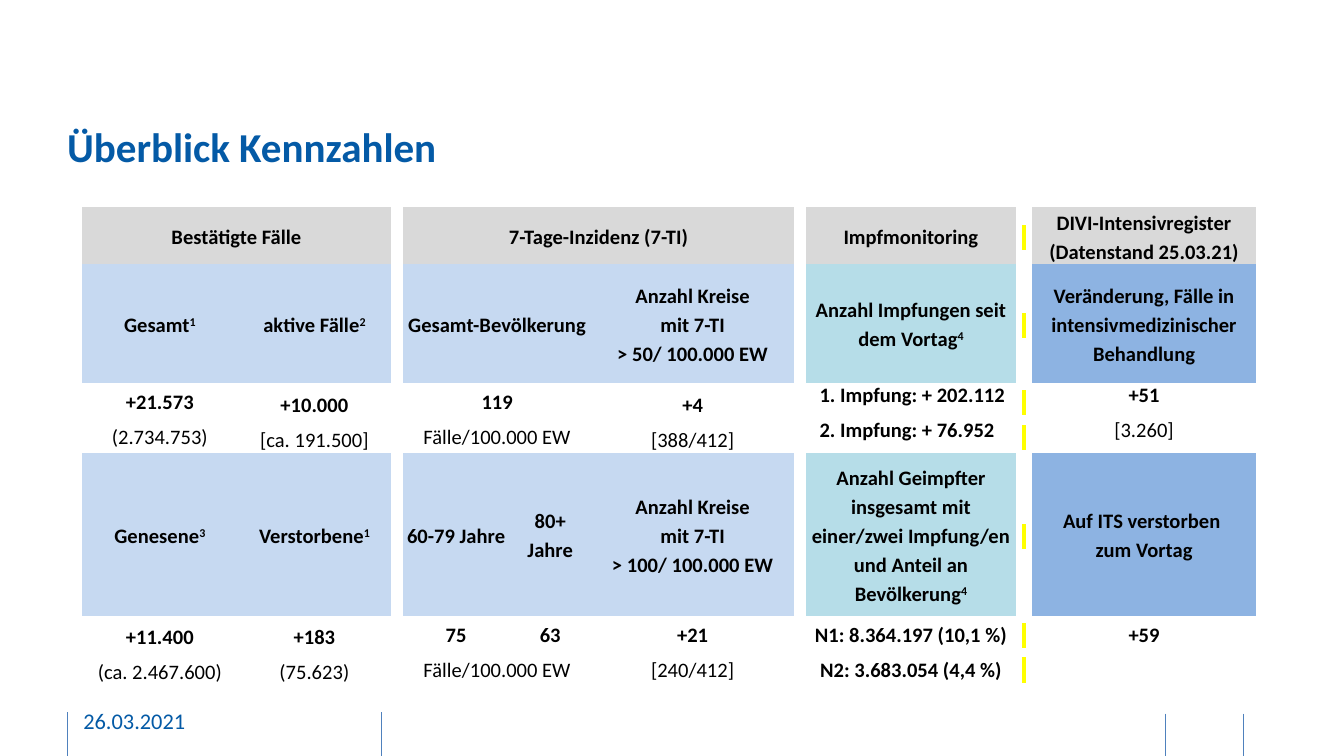
from dataclasses import dataclass

from pptx import Presentation
from pptx.dml.color import RGBColor
from pptx.enum import shapes, text
from pptx.oxml import xmlchemy as xc
from pptx.util import Inches, Pt


@dataclass(frozen=True)
class Theme:
    """Colours, font and type sizes."""
    font: str = "Calibri"
    blue: str = "045AA6"
    rule: str = "4F81BD"
    black: str = "000000"
    mark: str = "FFFF00"
    head: str = "D9D9D9"
    pale: str = "C6D9F1"
    teal: str = "B6DDE8"
    deep: str = "8DB3E2"
    title: int = 22
    date: int = 12
    body: int = 11


T = Theme()
MID = text.MSO_ANCHOR.MIDDLE
LOW = text.MSO_ANCHOR.BOTTOM
TOP = text.MSO_ANCHOR.TOP
WIDE = 10
COLS = [1.16, 1.14, 0.09, 0.79, 0.61, 1.51, 0.09, 1.56, 0.12, 1.67]
ROWS = [0.26, 0.89, 0.26, 0.26, 1.21, 0.26, 0.26]
MARK = 8
NBSP = chr(160)
FILLS = {0: T.pale, 1: T.pale, 3: T.pale, 4: T.pale, 5: T.pale, 7: T.teal, 9: T.deep}
SPANS = [(0, 0, 0, 1), (0, 3, 0, 5), (1, 3, 1, 4), (2, 3, 2, 4),
         (3, 3, 3, 4), (6, 3, 6, 4), (5, 2, 6, 2)]
LOWS = {(2, 1), (2, 5), (3, 1), (3, 5), (5, 0), (5, 1), (6, 0), (6, 1)}
DATA = [
    {0: "Bestätigte Fälle", 3: "7-Tage-Inzidenz (7-TI)", 7: "Impfmonitoring",
     9: "DIVI-Intensivregister\n(Datenstand 25.03.21)"},
    {0: "Gesamt^1", 1: "aktive Fälle^2", 3: "Gesamt-Bevölkerung",
     5: "Anzahl Kreise\nmit 7-TI\n> 50/ 100.000 EW",
     7: "Anzahl Impfungen seit dem Vortag^4",
     9: "Veränderung, Fälle in intensivmedizinischer Behandlung"},
    {0: "+21.573", 1: "+10.000", 3: "119", 5: "+4",
     7: "1. Impfung: + 202.112", 9: "+51"},
    {0: "(2.734.753)", 1: "[ca. 191.500]", 3: "Fälle/100.000 EW", 5: "[388/412]",
     7: "2. Impfung: + 76.952", 9: "[3.260]"},
    {0: "Genesene^3", 1: "Verstorbene^1", 3: "60-79 Jahre", 4: "80+ Jahre",
     5: "Anzahl Kreise\nmit 7-TI\n> 100/ 100.000 EW",
     7: "Anzahl Geimpfter insgesamt mit einer/zwei Impfung/en und Anteil an Bevölkerung^4",
     9: "Auf ITS verstorben |zum Vortag"},
    {0: "+11.400", 1: "+183", 3: "75", 4: "63", 5: "+21",
     7: "N1: 8.364.197 (10,1 %)", 9: "+59"},
    {0: "(ca. 2.467.600)", 1: "(75.623)", 3: "Fälle/100.000 EW", 5: "[240/412]",
     7: "N2: 3.683.054 (4,4 %)"},
]


def style(par, size, color, bold=False):
    """Set the font of a paragraph."""
    font = par.font
    font.name, font.size, font.bold = T.font, Pt(size), bold
    font.color.rgb = RGBColor.from_string(color)


def label(slide, words, box, size, pad=0, bold=False):
    """Add one line of blue text."""
    frame = slide.shapes.add_textbox(*map(Inches, box)).text_frame
    frame.word_wrap, frame.vertical_anchor = True, MID
    frame.margin_left = frame.margin_right = 0
    frame.margin_top = frame.margin_bottom = Inches(pad)
    par = frame.paragraphs[0]
    par.text = words
    style(par, size, T.blue, bold)


def rule(slide, x, top, end):
    """Add a thin vertical line."""
    line = slide.shapes.add_connector(
        shapes.MSO_CONNECTOR.STRAIGHT, *map(Inches, (x, top, x, end)))
    line.line.color.rgb = RGBColor.from_string(T.rule)
    line.line.width = Pt(0.5)
    line._element.spPr.append(xc.OxmlElement("a:effectLst"))


def light(run):
    """Highlight a run in yellow."""
    mark = xc.OxmlElement("a:highlight")
    tint = xc.OxmlElement("a:srgbClr")
    tint.set("val", T.mark)
    mark.append(tint)
    run._r.get_or_add_rPr().append(mark)


def write(par, words):
    """Write runs, with | as line break and ^ before a superscript."""
    for row, line in enumerate(words.split("|")):
        if row:
            par.add_line_break()
        for pos, part in enumerate(line.split("^")):
            run = par.add_run()
            run.text = part
            if pos:
                run._r.get_or_add_rPr().set("baseline", "30000")


def cell(box, row, col):
    """Fill, align and write one table cell."""
    words = NBSP if col == MARK else DATA[row].get(col, "")
    tint = T.head if row == 0 else FILLS.get(col) if row in (1, 4) else None
    if tint and words.strip():
        box.fill.solid()
        box.fill.fore_color.rgb = RGBColor.from_string(tint)
    else:
        box.fill.background()
    high = row in (2, 3) and col in (7, 9)
    box.margin_left = box.margin_right = Inches(0.02)
    box.margin_top = box.margin_bottom = 0
    box.vertical_anchor = TOP if high else LOW if (row, col) in LOWS else MID
    frame = box.text_frame
    for pos, line in enumerate(words.split("\n")):
        par = frame.add_paragraph() if pos else frame.paragraphs[0]
        par.alignment = text.PP_ALIGN.CENTER
        if not high:
            par.line_spacing = 1.15
        elif col == 7:
            par.alignment = text.PP_ALIGN.LEFT
            par._p.get_or_add_pPr().set("marL", str(Inches(0.08)))
        if (row, col) == (3, 3):
            par.space_after = Pt(3)
        style(par, T.body, T.black, row not in (3, 6) or col == 7)
        if line:
            write(par, line)
        else:
            end = xc.OxmlElement("a:endParaRPr")
            end.set("sz", str(T.body * 100))
            par._p.append(end)
        if col == MARK:
            light(par.runs[0])


def grid(slide):
    """Add the table of key figures."""
    table = slide.shapes.add_table(
        len(ROWS), len(COLS), *map(Inches, (0.61, 1.54, sum(COLS), sum(ROWS)))).table
    table.first_row = table.horz_banding = False
    table._tbl.tblPr[0].text = "{2D5ABB26-0587-4C30-8999-92F81FD0307C}"
    for col, size in enumerate(COLS):
        table.columns[col].width = Inches(size)
    for row, size in enumerate(ROWS):
        table.rows[row].height = Inches(size)
        for col in range(len(COLS)):
            cell(table.cell(row, col), row, col)
    for top, left, end, right in SPANS:
        table.cell(top, left).merge(table.cell(end, right))


def main():
    """Build and save the slide."""
    deck = Presentation()
    deck.slide_width, deck.slide_height = Inches(WIDE), Inches(WIDE * 9 / 16)
    slide = deck.slides.add_slide(deck.slide_layouts[6])
    for x, top, end in [(8.67, 5.31, 5.65), (2.84, 5.3, 5.64),
                        (0.5, 5.3, 5.63), (9.25, 5.31, 5.65)]:
        rule(slide, x, top, end)
    label(slide, "26.03.2021", (0.62, 5.21, 2.03, 0.3), T.date, pad=0.05)
    label(slide, "Überblick Kennzahlen", (0.5, 0.7, 8.73, 0.78), T.title, bold=True)
    grid(slide)
    deck.save("out.pptx")


if __name__ == "__main__":
    main()
